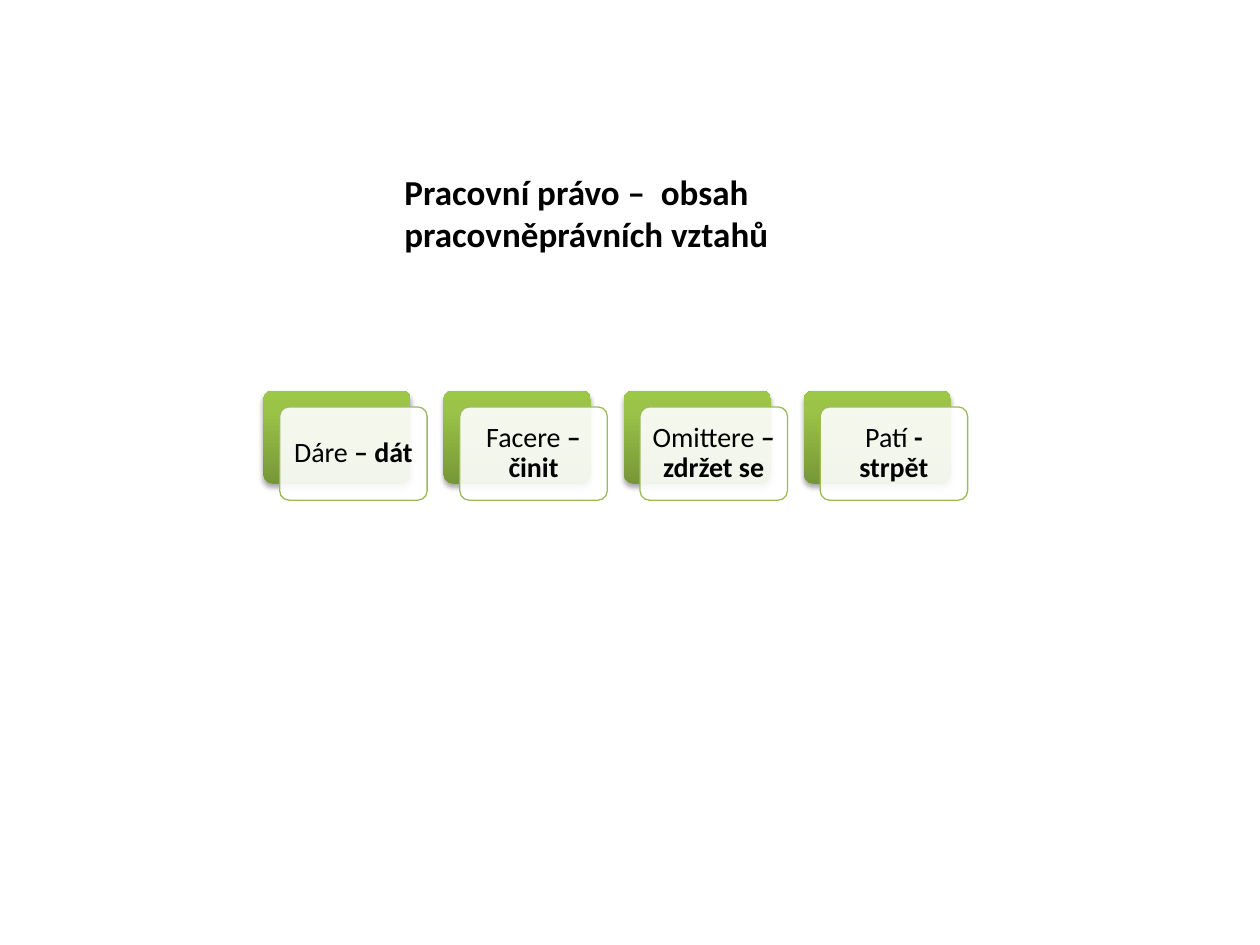
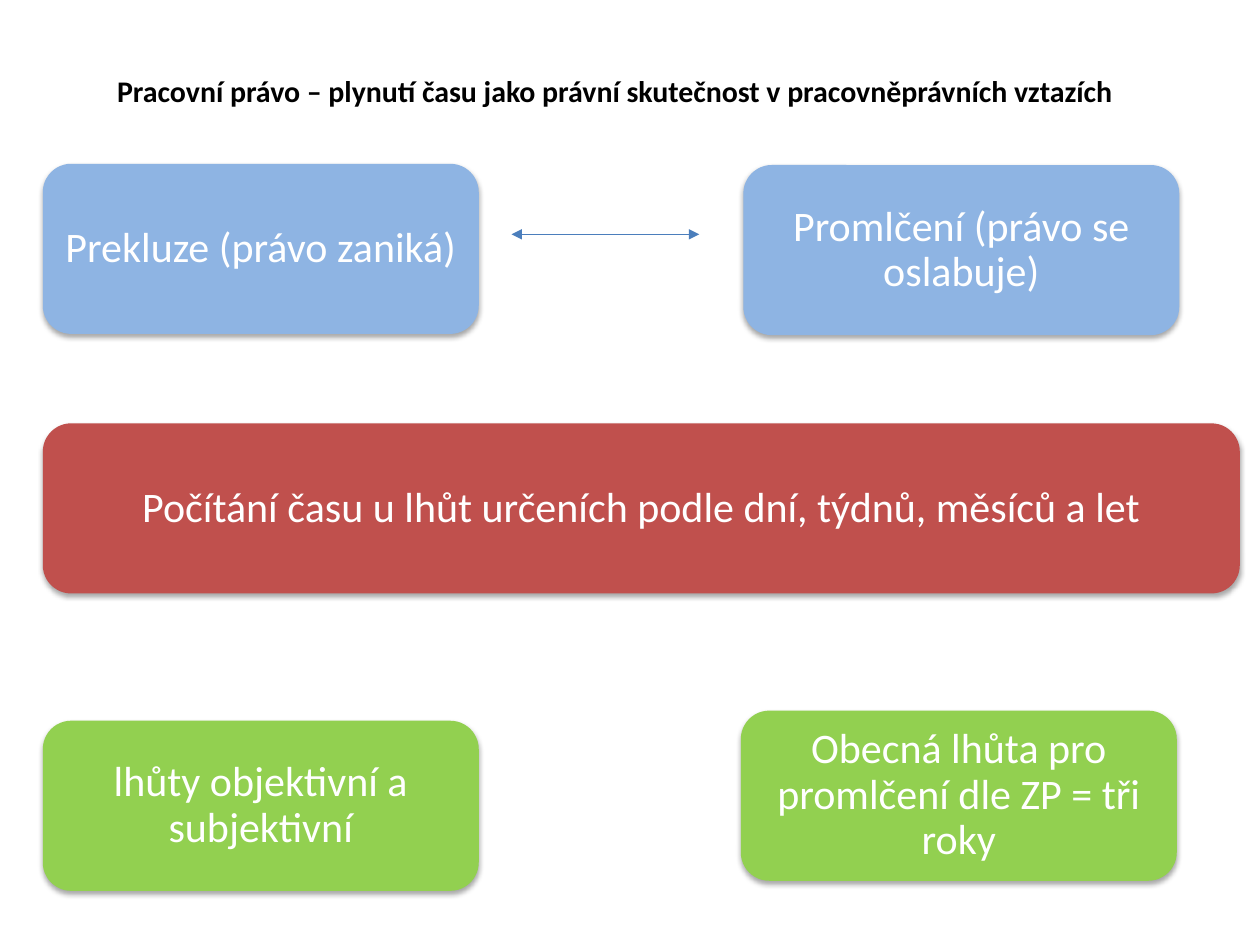
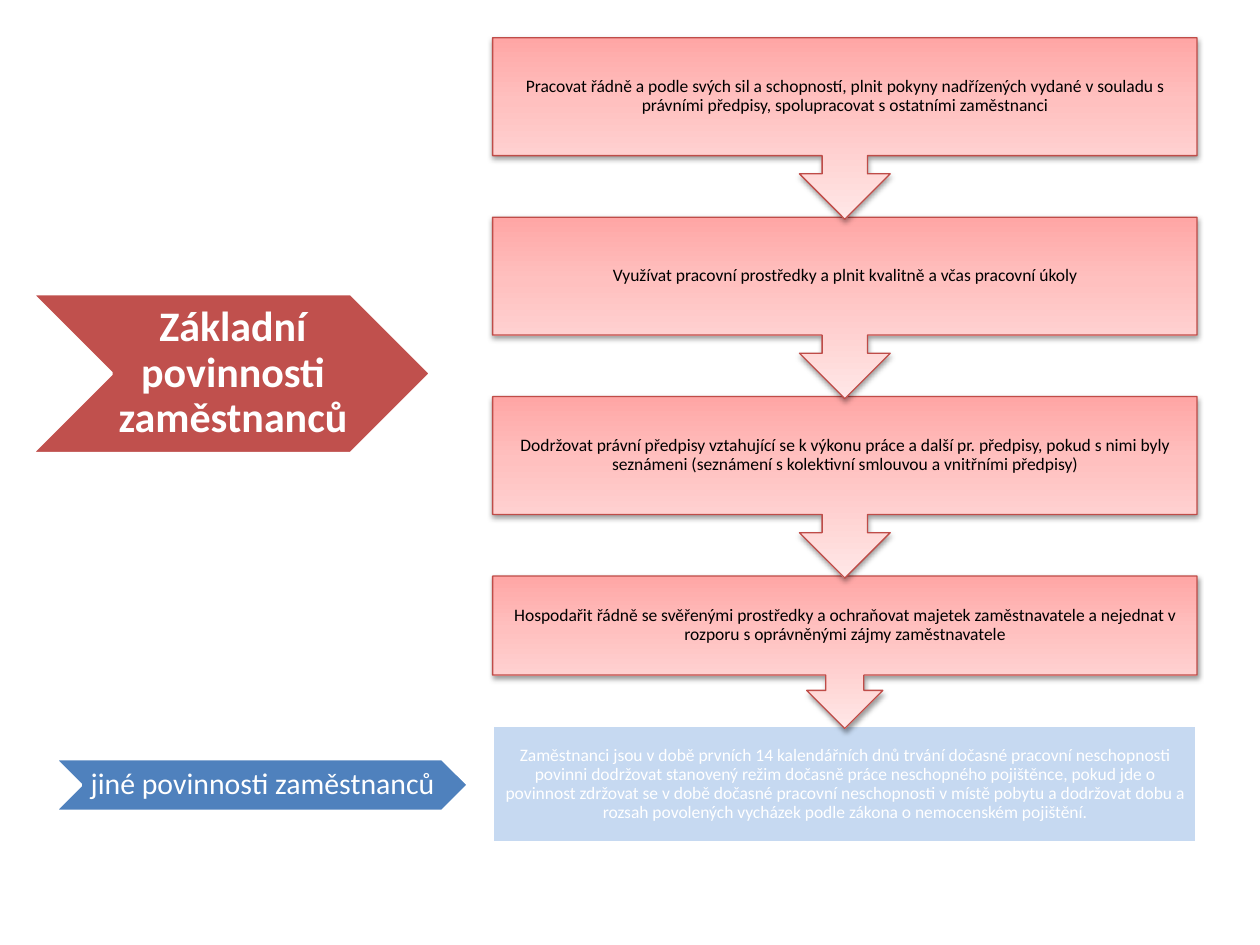
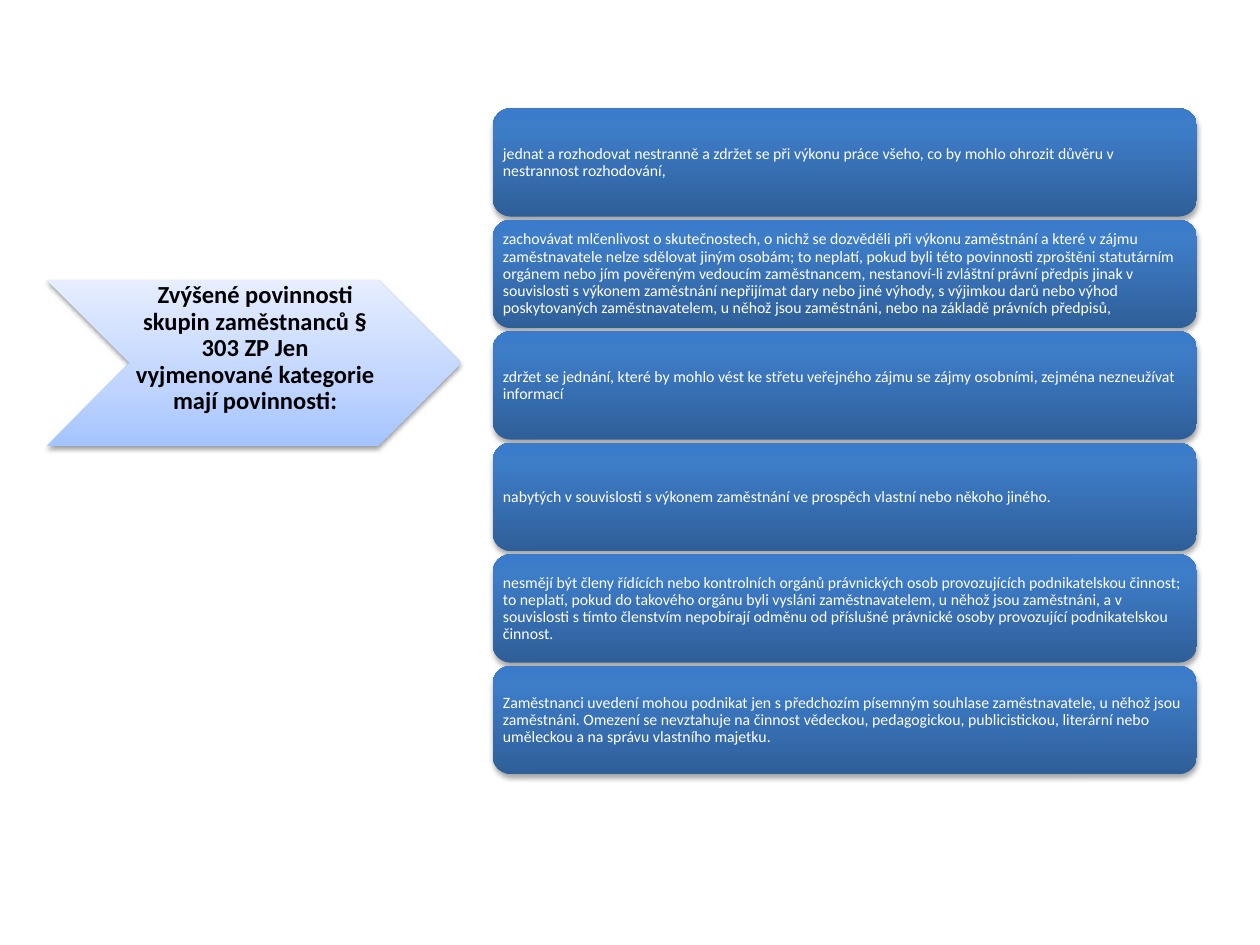
from lxml.etree import SubElement as Sub
from pptx import Presentation
from pptx.dml.color import RGBColor
from pptx.enum.shapes import MSO_CONNECTOR as LINK, MSO_SHAPE as SHAPE
from pptx.enum.text import MSO_ANCHOR as ANCHOR, MSO_AUTO_SIZE as FIT, PP_ALIGN as ALIGN
from pptx.oxml.ns import qn
from pptx.util import Inches, Pt

# Shared look
FONT = "Calibri"
BLACK, WHITE = "000000", "FFFFFF"
RED, GREEN, BLUE = "C0504D", "9BBB59", "4F81BD"
SKY, LIME, PALE = "8EB4E3", "92D050", "C6D9F1"
# Gradients: angle, then (position, colour) stops
LEAF = (90, [(0, "779737"), (80, "9BC348"), (100, "9DC746")])
NAVY = (90, [(0, "2F5F99"), (80, "3D7CC7"), (100, "3A7CCB")])
ICE = (90, [(0, "A4C4FF"), (35, "BFD4FF"), (100, "E6EEFF")])
ROSE = (270, [(0, "FFA6A5"), (35, "FFC0BF"), (100, "FFE7E7")])
# Shadows: opacity in percent, distance in points
DEEP, SOFT = (35, 1.8), (38, 1.6)

# Right-hand column of slides 3 and 4
COL_X, COL_W = 3.91, 5.59

CARDS = [("Dáre", " – dát"), ("Facere", " – činit"),
         ("Omittere", " – zdržet se"), ("Patí", " - strpět")]

TERMS = [
    (5.9, 1.31, 3.46, SKY, "Promlčení (právo se oslabuje)"),
    (0.34, 1.3, 3.46, SKY, "Prekluze (právo zaniká)"),
    (0.34, 3.36, 9.5, RED,
     "Počítání času u lhůt určeních podle dní, týdnů, měsíců a let"),
    (5.88, 5.64, 3.46, LIME, "Obecná lhůta pro promlčení dle ZP = tři roky"),
    (0.34, 5.72, 3.46, LIME, "lhůty objektivní a subjektivní"),
]

DUTIES = [
    "Pracovat řádně a podle svých sil a schopností, plnit pokyny nadřízených "
    "vydané v souladu s právními předpisy, spolupracovat s ostatními zaměstnanci",
    "Využívat pracovní prostředky a plnit kvalitně a včas pracovní úkoly",
    "Dodržovat právní předpisy vztahující se k výkonu práce a další pr. předpisy, "
    "pokud s nimi byly seznámeni (seznámení s kolektivní smlouvou a vnitřními "
    "předpisy)",
    "Hospodařit řádně se svěřenými prostředky a ochraňovat majetek zaměstnavatele "
    "a nejednat v rozporu s oprávněnými zájmy zaměstnavatele",
]

SICK = (
    "Zaměstnanci jsou v době prvních 14 kalendářních dnů trvání dočasné pracovní "
    "neschopnosti povinni dodržovat stanovený režim dočasně práce neschopného "
    "pojištěnce, pokud jde o povinnost zdržovat se v době dočasné pracovní "
    "neschopnosti v místě pobytu a dodržovat dobu a rozsah povolených vycházek "
    "podle zákona o nemocenském pojištění.")

RULES = [
    "jednat a rozhodovat nestranně a zdržet se při výkonu práce všeho, co by mohlo "
    "ohrozit důvěru v nestrannost rozhodování,",
    "zachovávat mlčenlivost o skutečnostech, o nichž se dozvěděli při výkonu "
    "zaměstnání a které v zájmu zaměstnavatele nelze sdělovat jiným osobám; to "
    "neplatí, pokud byli této povinnosti zproštěni statutárním orgánem nebo jím "
    "pověřeným vedoucím zaměstnancem, nestanoví-li zvláštní právní předpis jinak v "
    "souvislosti s výkonem zaměstnání nepřijímat dary nebo jiné výhody, s výjimkou "
    "darů nebo výhod poskytovaných zaměstnavatelem, u něhož jsou zaměstnáni, nebo "
    "na základě právních předpisů,",
    "zdržet se jednání, které by mohlo vést ke střetu veřejného zájmu se zájmy "
    "osobními, zejména nezneužívat informací",
    "nabytých v souvislosti s výkonem zaměstnání ve prospěch vlastní nebo někoho "
    "jiného.",
    "nesmějí být členy řídících nebo kontrolních orgánů právnických osob "
    "provozujících podnikatelskou činnost; to neplatí, pokud do takového orgánu "
    "byli vysláni zaměstnavatelem, u něhož jsou zaměstnáni, a v souvislosti s tímto "
    "členstvím nepobírají odměnu od příslušné právnické osoby provozující "
    "podnikatelskou činnost.",
    "Zaměstnanci uvedení mohou podnikat jen s předchozím písemným souhlase "
    "zaměstnavatele, u něhož jsou zaměstnáni. Omezení se nevztahuje na činnost "
    "vědeckou, pedagogickou, publicistickou, literární nebo uměleckou a na správu "
    "vlastního majetku.",
]


def rgb(code):
    return RGBColor.from_string(code)


def write(shape, text, bold_end="", size=10, color=BLACK, bold=False,
          align=ALIGN.CENTER, anchor=ANCHOR.MIDDLE, pad=(0.1, 0.05, 0.1, 0.05),
          space=0.9):
    """Fill a shape with one paragraph; bold_end is a bold closing run."""
    frame = shape.text_frame
    frame.word_wrap = True
    frame.auto_size = FIT.NONE
    frame.vertical_anchor = anchor
    (frame.margin_left, frame.margin_top,
     frame.margin_right, frame.margin_bottom) = map(Inches, pad)
    par = frame.paragraphs[0]
    par.alignment = align
    par.line_spacing = space
    for part, heavy in ((text, bold), (bold_end, True)):
        if part:
            run = par.add_run()
            run.text = part
            font = run.font
            font.name, font.size, font.bold = FONT, Pt(size), heavy
            font.color.rgb = rgb(color)


def paint(shape, fill, alpha=None):
    """Fill with a colour, or with a gradient given as (angle, stops)."""
    props = shape.element.spPr
    if isinstance(fill, str):
        shape.fill.solid()
        shape.fill.fore_color.rgb = rgb(fill)
        if alpha:
            tint = props.find(qn("a:solidFill")).find(qn("a:srgbClr"))
            Sub(tint, qn("a:alpha"), val=str(alpha * 1000))
        return
    angle, stops = fill
    shape.fill.gradient()
    shape.fill.gradient_angle = angle
    ramp = props.find(qn("a:gradFill")).find(qn("a:gsLst"))
    for old in list(ramp):
        ramp.remove(old)
    for pos, code in stops:
        stop = Sub(ramp, qn("a:gs"), pos=str(pos * 1000))
        Sub(stop, qn("a:srgbClr"), val=code)


def shade(shape, alpha, dist):
    effects = shape.element.spPr.find(qn("a:effectLst"))
    drop = Sub(effects, qn("a:outerShdw"), blurRad=str(Pt(3.1)),
               dist=str(Pt(dist)), dir="5400000", rotWithShape="0")
    tint = Sub(drop, qn("a:srgbClr"), val=BLACK)
    Sub(tint, qn("a:alpha"), val=str(alpha * 1000))


def block(slide, kind, box, fill, line=None, width=0.75, shadow=None,
          alpha=None, corner=None):
    shape = slide.shapes.add_shape(kind, *map(Inches, box))
    if corner:
        shape.adjustments[0] = corner
    paint(shape, fill, alpha)
    if line:
        shape.line.color.rgb = rgb(line)
        shape.line.width = Pt(width)
    else:
        shape.line.fill.background()
    shape.shadow.inherit = False
    if shadow:
        shade(shape, *shadow)
    return shape


def head(slide, text, box, size):
    title = slide.shapes.title
    title.left, title.top, title.width, title.height = map(Inches, box)
    write(title, text, size=size, bold=True, align=ALIGN.LEFT,
          anchor=ANCHOR.BOTTOM, space=1.0)


def arrow(slide, start, end, color):
    """Line with an arrowhead at both ends."""
    link = slide.shapes.add_connector(LINK.STRAIGHT, *map(Inches, start + end))
    link.line.color.rgb = rgb(color)
    link.line.width = Pt(0.75)
    props = link.element.spPr
    for tip in ("a:headEnd", "a:tailEnd"):
        Sub(props.find(qn("a:ln")), qn(tip), type="triangle")
    Sub(props, qn("a:effectLst"))


def content(slide):
    head(slide, "Pracovní právo –  obsah pracovněprávních vztahů",
         (3.11, 0.8, 3.29, 1.27), 20)
    wide, high, step, shift = 1.17, 0.74, 1.43, 0.13
    for i, (term, sense) in enumerate(CARDS):
        left = 2.09 + i * step
        block(slide, SHAPE.ROUNDED_RECTANGLE, (left, 3.1, wide, high), LEAF,
              shadow=DEEP, corner=0.1)
        card = block(slide, SHAPE.ROUNDED_RECTANGLE,
                     (left + shift, 3.1 + shift, wide, high), WHITE,
                     line=GREEN, alpha=90, corner=0.1)
        write(card, term, sense, size=16, pad=(0.07,) * 4)


def time(slide):
    head(slide, "Pracovní právo – plynutí času jako právní skutečnost "
         "v pracovněprávních vztazích", (0.83, 0.21, 8.52, 0.7), 17.1)
    for left, top, wide, fill, text in TERMS:
        term = block(slide, SHAPE.ROUNDED_RECTANGLE, (left, top, wide, 1.35),
                     fill, shadow=DEEP)
        write(term, text, size=24, color=WHITE)
    arrow(slide, (4.06, 1.86), (5.55, 1.86), "4B7EBC")


def duties(slide):
    main_tag = block(slide, SHAPE.CHEVRON, (0.25, 2.33, 3.17, 1.27), RED,
                     line=WHITE, width=2)
    write(main_tag, "Základní povinnosti zaměstnanců", size=24, color=WHITE,
          bold=True, pad=(0.03, 0.02, 0, 0.02))
    # Chain of steps, lowest first so that each arrow lies on the next box
    last = block(slide, SHAPE.RECTANGLE, (COL_X, 5.76, COL_W, 0.93), PALE,
                 line=WHITE, width=2)
    write(last, SICK, color=WHITE, pad=(0.08,) * 4)
    for i, text in reversed(list(enumerate(DUTIES))):
        high = 1.21 if i == len(DUTIES) - 1 else 1.44
        step = block(slide, SHAPE.DOWN_ARROW_CALLOUT,
                     (COL_X, 0.3 + i * 1.424, COL_W, high), ROSE,
                     line="BF4C48", shadow=SOFT)
        write(step, text, pad=(0.08,) * 4)
    side_tag = block(slide, SHAPE.CHEVRON, (0.43, 6.02, 3.29, 0.42), BLUE,
                     line=WHITE, width=2)
    write(side_tag, "jiné povinnosti zaměstnanců", size=17, color=WHITE,
          pad=(0.02, 0.01, 0, 0.01))


def limits(slide):
    tag = block(slide, SHAPE.CHEVRON, (0.37, 2.22, 3.29, 1.32), ICE, shadow=SOFT)
    write(tag, "Zvýšené povinnosti skupin zaměstnanců § 303 ZP Jen vyjmenované "
          "kategorie mají povinnosti:", size=14, bold=True,
          pad=(0.02, 0.01, 0, 0.23))
    for i, text in enumerate(RULES):
        rule = block(slide, SHAPE.ROUNDED_RECTANGLE,
                     (COL_X, 0.86 + i * 0.885, COL_W, 0.86), NAVY, shadow=DEEP)
        write(rule, text, size=9, color=WHITE, align=ALIGN.LEFT,
              pad=(0.04,) * 4)


def main():
    deck = Presentation()
    deck.slide_width, deck.slide_height = Inches(10), Inches(7.5)
    titled, blank = deck.slide_layouts[5], deck.slide_layouts[6]
    for build, layout in ((content, titled), (time, titled),
                          (duties, blank), (limits, blank)):
        build(deck.slides.add_slide(layout))
    deck.save("out.pptx")


if __name__ == "__main__":
    main()
